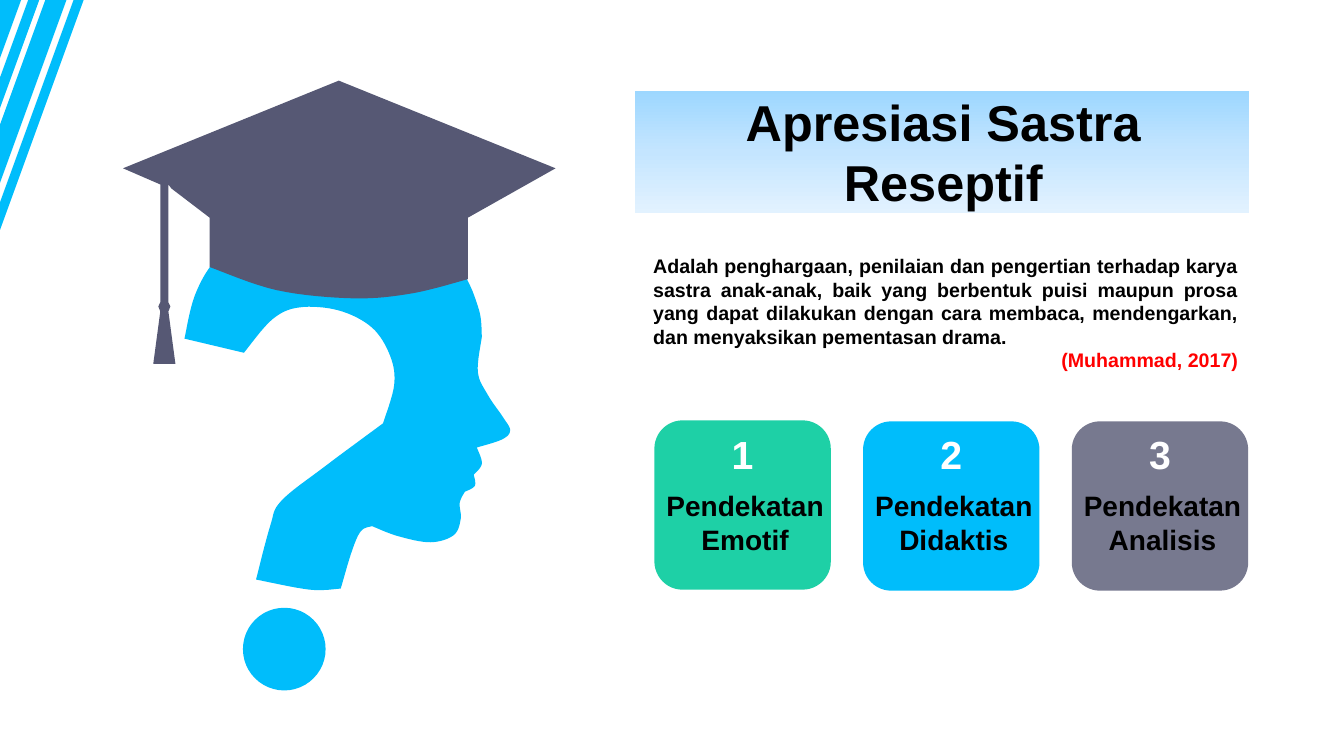
from copy import deepcopy
from math import cos, sin, tau

from lxml import etree
from pptx import Presentation
from pptx.dml.color import RGBColor
from pptx.enum import shapes, text
from pptx.oxml import ns
from pptx.util import Inches, Pt

BLUE = RGBColor(0x00, 0xBD, 0xFB)
GREEN = RGBColor(0x1E, 0xD0, 0xA6)
SLATE = RGBColor(0x56, 0x58, 0x74)
BLACK = RGBColor(0, 0, 0)
WHITE = RGBColor(255, 255, 255)
RED = RGBColor(255, 0, 0)
TITLE_SHADES = [RGBColor(0x9D, 0xD7, 0xFF), RGBColor(0xC4, 0xE5, 0xFF), RGBColor(0xE2, 0xF2, 0xFF)]

prs = Presentation()
prs.slide_width, prs.slide_height = Inches(13.33), Inches(7.5)
slide = prs.slides.add_slide(prs.slide_layouts[6])


def smooth(landmarks, steps=8):
    """Return points on a Catmull-Rom curve that passes through every landmark."""
    padded = [landmarks[0], *landmarks, landmarks[-1]]
    points = [landmarks[0]]
    for before, start, end, after in zip(padded, padded[1:], padded[2:], padded[3:]):
        for t in (step / steps for step in range(1, steps + 1)):
            points.append(tuple(
                b + ((c - a) * t + (2 * a - 5 * b + 4 * c - d) * t**2
                     + (3 * b - a - 3 * c + d) * t**3) / 2
                for a, b, c, d in zip(before, start, end, after)))
    return points


def add_label(left, top, width, height, wording, size, color=BLACK,
              align=text.PP_ALIGN.CENTER):
    label = slide.shapes.add_textbox(Inches(left), Inches(top), Inches(width), Inches(height))
    frame = label.text_frame
    frame.word_wrap = True
    frame.text = wording
    for paragraph in frame.paragraphs:
        paragraph.alignment = align
        paragraph.font.name = "Arial"
        paragraph.font.size = Pt(size)
        paragraph.font.bold = True
        paragraph.font.color.rgb = color
    return frame


# Question mark with a face: each part is a smooth curve, with a corner where parts meet
hook_tip, brow, nose_base = (1.83, 3.36), (4.78, 3.34), (4.73, 4.44)
mouth, lip_base, throat = (4.7, 4.71), (4.61, 4.88), (3.69, 5.22)
neck_front, neck_back, stem_bend = (3.38, 5.84), (2.54, 5.75), (3.8, 4.2)
head_parts = {
    "skull": [hook_tip, (1.93, 2.94), (2.12, 2.6), (2.43, 2.32), (2.83, 2.14), (3.32, 2.08),
              (3.73, 2.13), (4.22, 2.34), (4.58, 2.69), (4.75, 3.07), brow],
    "nose": [brow, (4.74, 3.69), (4.84, 3.92), (4.99, 4.14), (5.06, 4.27), (4.98, 4.36), nose_base],
    "upper lip": [nose_base, (4.78, 4.6), mouth],
    "lower lip": [mouth, (4.71, 4.82), lip_base],
    "chin": [lip_base, (4.56, 4.99), (4.57, 5.15), (4.5, 5.31), (4.27, 5.38), (3.95, 5.32), throat],
    "neck": [throat, (3.58, 5.27), (3.49, 5.47), neck_front],
    "base": [neck_front, (3.07, 5.85), neck_back],
    "stem": [neck_back, (2.68, 5.22), (2.79, 4.97), (3.22, 4.63), stem_bend],
    "bowl": [stem_bend, (3.91, 3.82), (3.87, 3.53), (3.69, 3.25), (3.36, 3.08), (2.97, 3.05),
             (2.7, 3.17), (2.42, 3.5)],
}
head = [point for landmarks in head_parts.values() for point in smooth(landmarks)]

dot_x, dot_y, dot_radius, dot_sides = 2.82, 6.44, 0.41, 48
dot = [(dot_x + dot_radius * cos(tau * i / dot_sides), dot_y + dot_radius * sin(tau * i / dot_sides))
       for i in range(dot_sides)]

# Graduation cap: the tassel is symmetric about its cord
cord_x = 1.63
tassel_widths = [(0.04, 1.83), (0.04, 3), (0.06, 3.04), (0.04, 3.09), (0.11, 3.61)]
tassel = [(cord_x - half, y) for half, y in tassel_widths]
tassel += [(cord_x + half, y) for half, y in reversed(tassel_widths)]
board_top, board_left, board_right = (3.36, 0.8), (1.22, 1.67), (5.51, 1.67)
brim = smooth([(2.08, 2.65), (2.75, 2.88), (3.51, 2.96), (4.09, 2.91), (4.64, 2.77)])
cap = [board_top, board_left, *tassel, (1.7, 1.87), (2.08, 2.16), *brim, (4.64, 2.16), board_right]

# Corner stripes: parallel bands between two places on the top edge
stripe_slope = 2.75
stripe_edges = [(0, 0.21), (0.28, 0.39), (0.45, 0.66), (0.73, 0.83)]
stripes = [[(near, 0), (far, 0), (0, far * stripe_slope), (0, near * stripe_slope)]
           for near, far in stripe_edges]

for color, contours in [(BLUE, [head, dot]), (SLATE, [cap]), (BLUE, stripes)]:
    builder = slide.shapes.build_freeform(*map(Inches, contours[0][0]))
    for contour in contours:
        corners = [(Inches(x), Inches(y)) for x, y in contour]
        if contour is not contours[0]:
            builder.move_to(*corners[0])
        builder.add_line_segments(corners[1:], close=True)
    figure = builder.convert_to_shape()
    figure.shadow.inherit = False
    figure.fill.solid()
    figure.fill.fore_color.rgb = color
    figure.line.fill.background()

definition = add_label(
    6.38, 2.47, 6, 1.28,
    "Adalah penghargaan, penilaian dan pengertian terhadap karya sastra anak-anak, "
    "baik yang berbentuk puisi maupun prosa yang dapat dilakukan dengan cara membaca, "
    "mendengarkan, dan menyaksikan pementasan drama.\n(Muhammad, 2017)",
    14, align=text.PP_ALIGN.JUSTIFY)
citation = definition.paragraphs[1]
citation.alignment = text.PP_ALIGN.RIGHT
citation.font.color.rgb = RED

# Title on a gradient band
title = add_label(6.3, 0.9, 6.09, 1.21, "Apresiasi Sastra Reseptif", 36)
title.margin_left, title.margin_right = Inches(0.05), Inches(0.03)
title.margin_top = title.margin_bottom = 0
band = slide.shapes[-1]
band.fill.gradient()
band.fill.gradient_angle = 270
stop_list = band.element.spPr.find(".//" + ns.qn("a:gsLst"))
stop_list.insert(1, deepcopy(stop_list[0]))
for i, (stop, shade) in enumerate(zip(band.fill.gradient_stops, TITLE_SHADES)):
    stop.position = i / 2
    stop.color.rgb = shade

# Three approaches
card_pitch, card_width, card_height = 2.07, 1.75, 1.68
approaches = [("Emotif", GREEN, 4.17), ("Didaktis", BLUE, 4.18), ("Analisis", SLATE, 4.18)]
for i, (approach, color, top) in enumerate(approaches):
    left = 6.49 + card_pitch * i
    card = slide.shapes.add_shape(shapes.MSO_SHAPE.ROUNDED_RECTANGLE, Inches(left), Inches(top),
                                  Inches(card_width), Inches(card_height))
    card.shadow.inherit = False
    card.fill.solid()
    card.fill.fore_color.rgb = color
    card.line.fill.background()
    if color == SLATE:
        tint = card.element.spPr.find(".//" + ns.qn("a:srgbClr"))
        etree.SubElement(tint, ns.qn("a:alpha"), val="80000")
    number = add_label(left + 0.38, 4.24, 0.99, 0.53, str(i + 1), 28, WHITE)
    number.vertical_anchor = text.MSO_ANCHOR.MIDDLE
    number.paragraphs[0].space_before = Pt(5.6)
    add_label(left - 0.06, 4.8, 1.92, 0.77, f"Pendekatan {approach}", 20)

prs.save("out.pptx")
